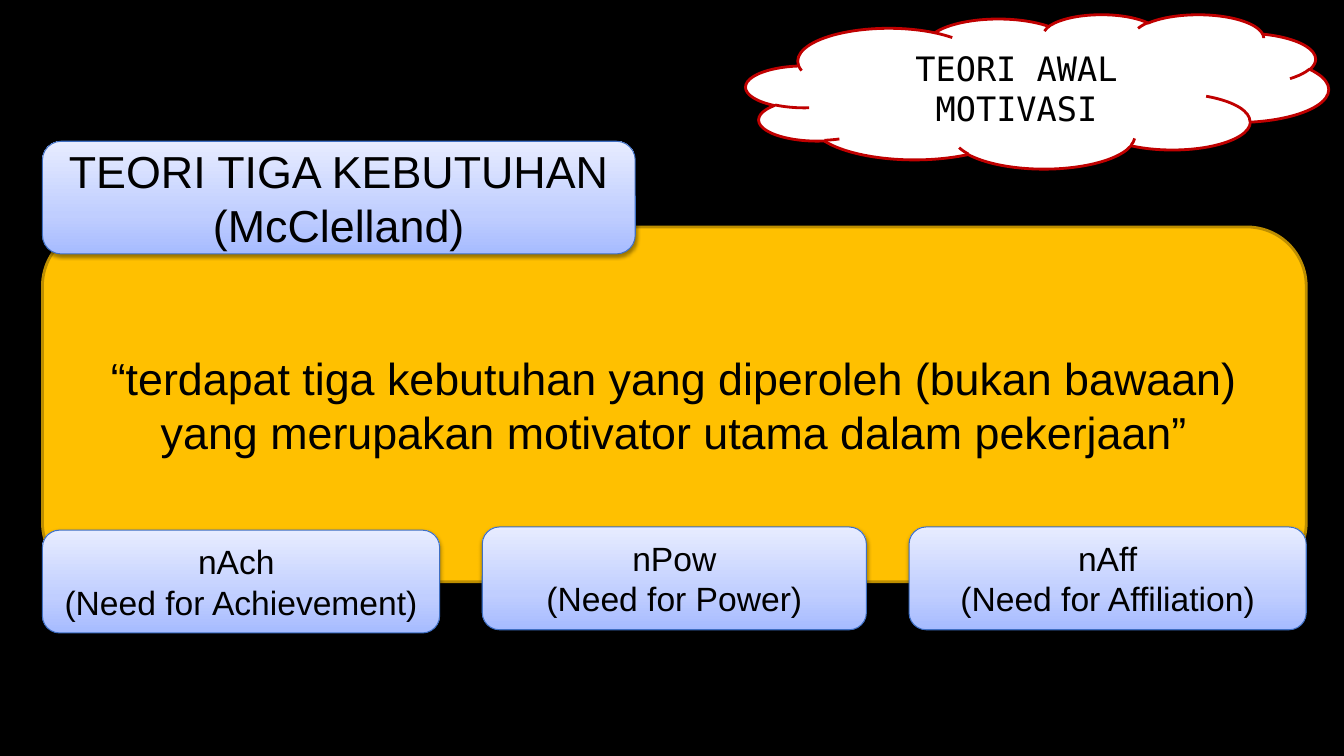
from pptx import Presentation
from pptx.dml.color import RGBColor
from pptx.enum.shapes import MSO_SHAPE
from pptx.enum.text import MSO_ANCHOR, PP_ALIGN
from pptx.oxml import parse_xml
from pptx.oxml.ns import nsdecls, qn
from pptx.util import Cm, Pt

CLOUD = MSO_SHAPE.CLOUD
ROUND = MSO_SHAPE.ROUNDED_RECTANGLE
MIDDLE = MSO_ANCHOR.MIDDLE
CENTER = PP_ALIGN.CENTER

COLORS = {
    "black": "000000",
    "white": "FFFFFF",
    "red": "C00000",
    "gold": "FFC000",
    "brown": "BD8E00",
    "blue": "3F6FC3",
}
STOPS = [(0, "A6BBFF"), (35, "C0CEFF"), (100, "E7ECFF")]
SANS = "Arial"
MONO = "DejaVu Sans Mono"

NEEDS = [
    ("nAch ", "(Need for Achievement)", 10.01, 0.08),
    ("nPow", "(Need for Power)", 9.68, 0),
    ("nAff", "(Need for Affiliation)", 10.01, 0),
]


def color(name):
    return RGBColor.from_string(COLORS[name])


def add_block(slide, kind, box, lines, size, font, edge, width, fill="white"):
    shape = slide.shapes.add_shape(kind, *[Cm(v) for v in box])
    shape.shadow.inherit = False
    shape.fill.solid()
    shape.fill.fore_color.rgb = color(fill)
    shape.line.color.rgb = color(edge)
    shape.line.width = Pt(width)
    frame = shape.text_frame
    frame.word_wrap = True
    frame.vertical_anchor = MIDDLE
    style = {"size": Pt(size), "name": font}
    for i, text in enumerate(lines):
        para = frame.paragraphs[0] if i == 0 else frame.add_paragraph()
        para.alignment = CENTER
        run = para.add_run()
        run.text = text
        for key, value in style.items():
            setattr(run.font, key, value)
        run.font.color.rgb = color("black")
    return shape


def add_label(slide, box, lines, size):
    shape = add_block(slide, ROUND, box, lines, size, SANS, "blue", 0.75)
    props = shape._element.spPr
    stops = "".join(
        f'<a:gs pos="{pos * 1000}"><a:srgbClr val="{tint}"/></a:gs>'
        for pos, tint in STOPS
    )
    blend = parse_xml(
        f'<a:gradFill {nsdecls("a")} rotWithShape="1"><a:gsLst>{stops}</a:gsLst>'
        '<a:lin ang="16200000" scaled="0"/></a:gradFill>'
    )
    props.replace(props.find(qn("a:solidFill")), blend)
    shade = parse_xml(
        f'<a:outerShdw {nsdecls("a")} blurRad="{Pt(3.1)}" dist="{Pt(1.6)}" '
        f'dir="5400000" rotWithShape="0"><a:srgbClr val="{COLORS["black"]}">'
        '<a:alpha val="38000"/></a:srgbClr></a:outerShdw>'
    )
    props.find(qn("a:effectLst")).append(shade)


def add_topic(slide, box):
    add_block(slide, CLOUD, box, ["TEORI AWAL MOTIVASI"], 24, MONO, "red", 2)


def add_theory(slide, box):
    left, top, width, height = box
    quote = (
        "“terdapat tiga kebutuhan yang diperoleh (bukan bawaan) "
        "yang merupakan motivator utama dalam pekerjaan”"
    )
    add_block(slide, ROUND, box, [quote], 32, SANS, "brown", 2, "gold")
    title = ["TEORI TIGA KEBUTUHAN (McClelland)"]
    add_label(slide, (left, top - 2.16, 14.94, 2.84), title, 32)
    add_needs(slide, (left, top + height - 1.38, width, 2.59))


def add_needs(slide, box):
    left, top, width, height = box
    gap = (width - sum(need[2] for need in NEEDS)) / (len(NEEDS) - 1)
    for name, gloss, wide, drop in NEEDS:
        add_label(slide, (left, top + drop, wide, height), [name, gloss], 24)
        left += wide + gap


def main():
    deck = Presentation()
    deck.slide_width = Cm(33.87)
    deck.slide_height = Cm(19.05)
    slide = deck.slides.add_slide(deck.slide_layouts[6])
    slide.background.fill.solid()
    slide.background.fill.fore_color.rgb = color("black")
    add_topic(slide, (18.8, 0.36, 14.68, 3.89))
    add_theory(slide, (1.07, 5.72, 31.85, 8.94))
    deck.save("out.pptx")


if __name__ == "__main__":
    main()
